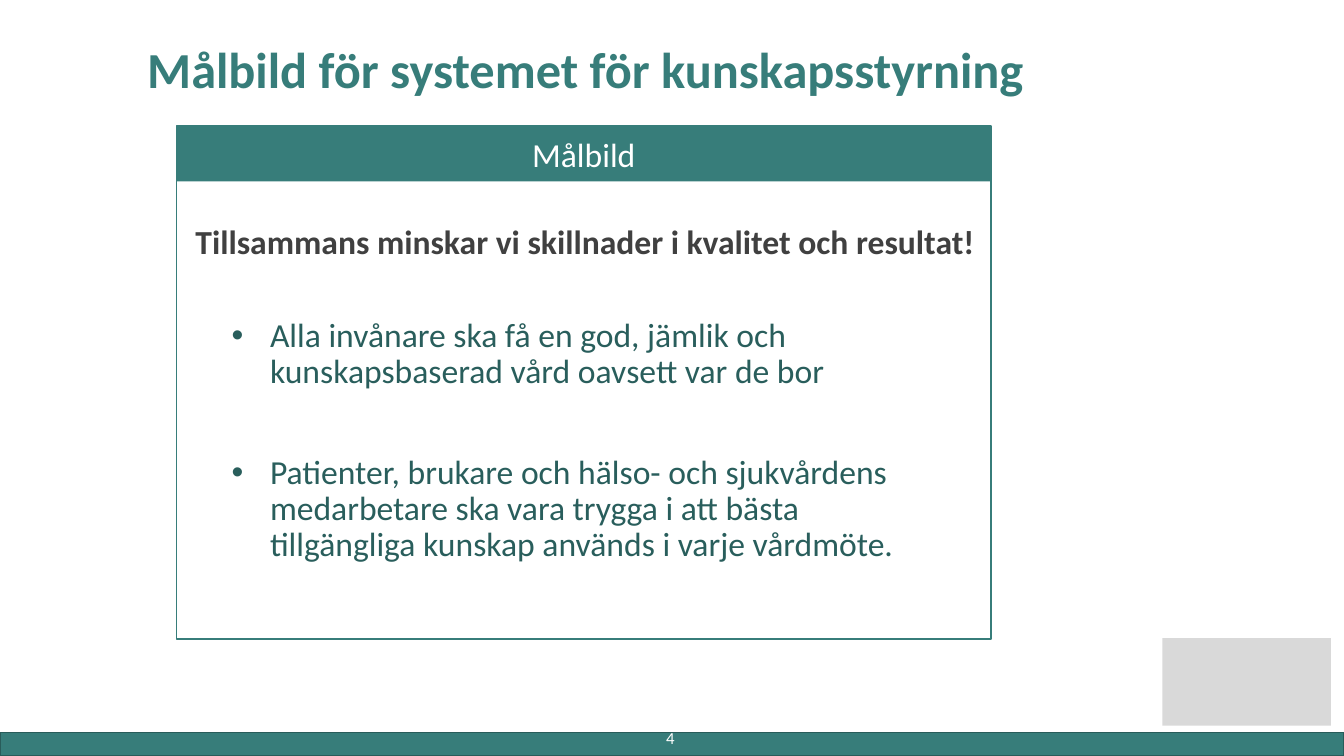
from dataclasses import dataclass
from typing import Optional

from lxml import etree
from pptx import Presentation
from pptx import util as u
from pptx.dml.color import RGBColor
from pptx.enum import shapes, text
from pptx.oxml import ns

PX = 9144
FONT = "Calibri"
TEAL = RGBColor(0x37, 0x7D, 0x7A)
TEAL_EDGE = RGBColor(0x29, 0x5C, 0x5A)
TEAL_TEXT = RGBColor(0x29, 0x5E, 0x5C)
GREY = RGBColor(0x40, 0x40, 0x40)
PALE = RGBColor(0xD9, 0xD9, 0xD9)
WHITE = RGBColor(255, 255, 255)
LEFT, CENTER = text.PP_ALIGN.LEFT, text.PP_ALIGN.CENTER
TOP, MIDDLE = text.MSO_ANCHOR.TOP, text.MSO_ANCHOR.MIDDLE


@dataclass(frozen=True)
class Place:
    left: int
    top: int
    width: int
    height: int

    def emu(self) -> list[u.Emu]:
        return [u.Emu(n * PX) for n in (self.left, self.top, self.width, self.height)]


@dataclass(frozen=True)
class Style:
    size: int
    color: RGBColor
    bold: bool = False
    align: text.PP_ALIGN = LEFT
    anchor: text.MSO_ANCHOR = TOP
    spacing: Optional[float] = None
    before: tuple[int, ...] = ()
    bullets: bool = False


@dataclass(frozen=True)
class Label:
    place: Place
    lines: tuple[str, ...]
    style: Style


@dataclass(frozen=True)
class Panel:
    place: Place
    fill: Optional[RGBColor] = None
    edge: Optional[RGBColor] = None


FOOTER = Panel(Place(0, 727, 1333, 23), TEAL, TEAL_EDGE)
CORNER = Panel(Place(1153, 633, 167, 87), PALE)
HEADER = Panel(Place(175, 125, 808, 55), TEAL)
FRAME = Panel(Place(175, 125, 808, 509), edge=TEAL)

TITLE = Label(
    Place(136, -1, 1100, 145),
    ("Målbild för systemet för kunskapsstyrning",),
    Style(36, TEAL, bold=True, anchor=MIDDLE, spacing=0.9),
)
HEADER_STYLE = Style(24, WHITE, align=CENTER, anchor=MIDDLE)
LABELS = (
    Label(Place(515, 717, 300, 40), ("4",), Style(12, WHITE, align=CENTER)),
    Label(
        Place(220, 311, 724, 314),
        (
            "Alla invånare ska få en god, jämlik och kunskapsbaserad vård "
            "oavsett var de bor",
            "Patienter, brukare och hälso- och sjukvårdens medarbetare ska vara "
            "trygga i att bästa tillgängliga kunskap används i varje vårdmöte.",
        ),
        Style(24, TEAL_TEXT, spacing=0.9, before=(10, 46), bullets=True),
    ),
    Label(
        Place(184, 150, 799, 184),
        ("Tillsammans minskar vi skillnader i kvalitet och resultat!",),
        Style(24, GREY, bold=True, anchor=MIDDLE, spacing=0.9),
    ),
)


def add_bullet(para) -> None:
    props = para._p.get_or_add_pPr()
    indent = 38 * PX
    props.set("marL", str(indent))
    props.set("indent", str(-indent))
    etree.SubElement(props, ns.qn("a:buFont")).set("typeface", "Arial")
    etree.SubElement(props, ns.qn("a:buChar")).set("char", "•")


def write(box, lines: tuple[str, ...], style: Style) -> None:
    frame = box.text_frame
    frame.text = "\n".join(lines)
    frame.word_wrap = True
    frame.auto_size = text.MSO_AUTO_SIZE.NONE
    frame.vertical_anchor = style.anchor
    for index, para in enumerate(frame.paragraphs):
        para.alignment = style.align
        para.line_spacing = style.spacing
        if style.before:
            para.space_before = u.Pt(style.before[index])
        if style.bullets:
            add_bullet(para)
        para.font.name = FONT
        para.font.size = u.Pt(style.size)
        para.font.bold = style.bold
        para.font.color.rgb = style.color


def draw_panel(page, panel: Panel):
    box = page.shapes.add_shape(shapes.MSO_SHAPE.RECTANGLE, *panel.place.emu())
    box.shadow.inherit = False
    if panel.fill is None:
        box.fill.background()
    else:
        box.fill.solid()
        box.fill.fore_color.rgb = panel.fill
    if panel.edge is None:
        box.line.fill.background()
    else:
        box.line.color.rgb = panel.edge
        box.line.width = u.Pt(1)
    return box


def draw_label(page, label: Label) -> None:
    box = page.shapes.add_textbox(*label.place.emu())
    write(box, label.lines, label.style)


def main() -> None:
    deck = Presentation()
    deck.slide_width, deck.slide_height = u.Emu(1333 * PX), u.Emu(750 * PX)
    page = deck.slides.add_slide(deck.slide_layouts[5])
    title = page.shapes.title
    title.left, title.top, title.width, title.height = TITLE.place.emu()
    write(title, TITLE.lines, TITLE.style)
    for panel in (FOOTER, CORNER):
        draw_panel(page, panel)
    write(draw_panel(page, HEADER), ("Målbild",), HEADER_STYLE)
    for label in LABELS:
        draw_label(page, label)
    draw_panel(page, FRAME)
    deck.save("out.pptx")


if __name__ == "__main__":
    main()
